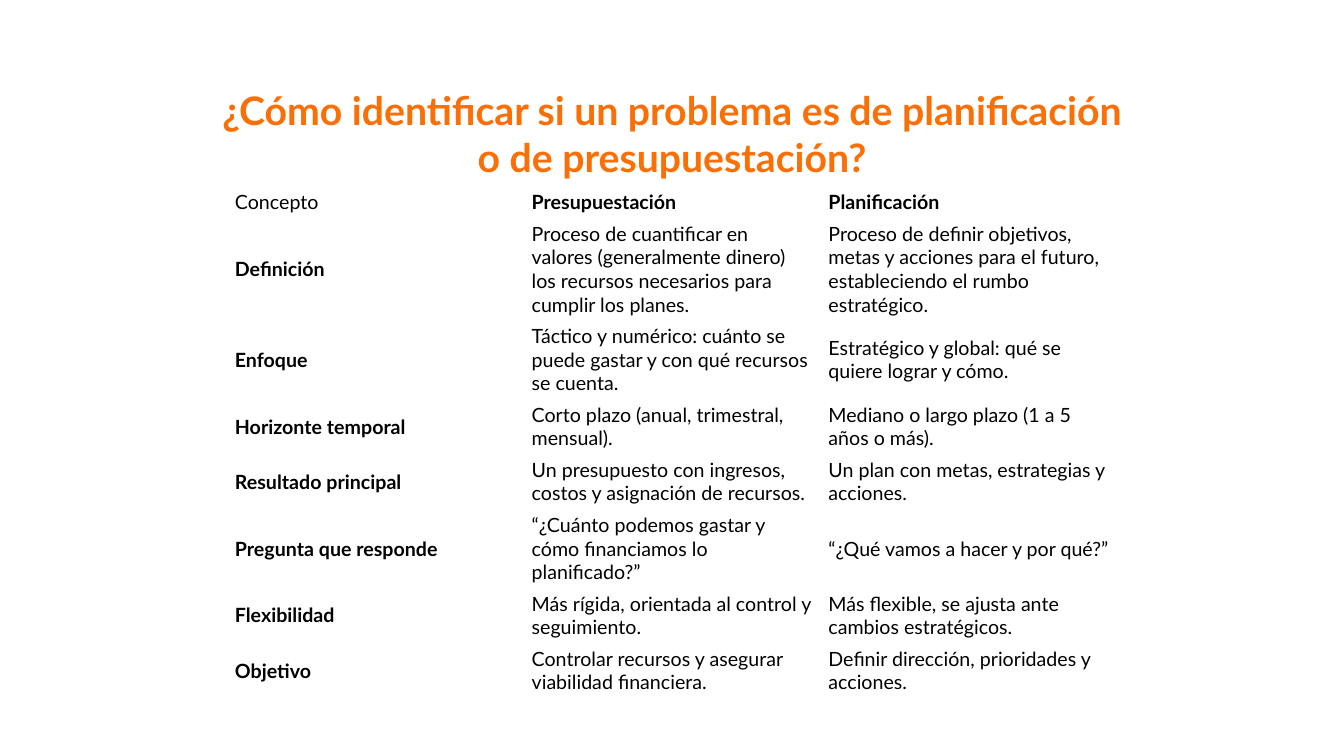
from pptx import Presentation
from pptx.dml.color import RGBColor
from pptx.enum.text import MSO_ANCHOR, PP_ALIGN
from pptx.util import Inches, Pt

MIDDLE = MSO_ANCHOR.MIDDLE
LEFT, CENTER = PP_ALIGN.LEFT, PP_ALIGN.CENTER
FONT = "Lato"
COLORS = {"title": "FA6F06", "text": "000000"}

TITLE = "¿Cómo identificar si un problema es de planificación o de presupuestación?"
COMPARISON = [
    ("Concepto", "Presupuestación", "Planificación"),
    ("Definición",
     "Proceso de cuantificar en valores (generalmente dinero) los recursos necesarios para cumplir los planes.",
     "Proceso de definir objetivos, metas y acciones para el futuro, estableciendo el rumbo estratégico."),
    ("Enfoque",
     "Táctico y numérico: cuánto se puede gastar y con qué recursos se cuenta.",
     "Estratégico y global: qué se quiere lograr y cómo."),
    ("Horizonte temporal",
     "Corto plazo (anual, trimestral, mensual).",
     "Mediano o largo plazo (1 a 5 años o más)."),
    ("Resultado principal",
     "Un presupuesto con ingresos, costos y asignación de recursos.",
     "Un plan con metas, estrategias y acciones."),
    ("Pregunta que responde",
     "“¿Cuánto podemos gastar y cómo financiamos lo planificado?”",
     "“¿Qué vamos a hacer y por qué?”"),
    ("Flexibilidad",
     "Más rígida, orientada al control y seguimiento.",
     "Más flexible, se ajusta ante cambios estratégicos."),
    ("Objetivo",
     "Controlar recursos y asegurar viabilidad financiera.",
     "Definir dirección, prioridades y acciones."),
]
ROW_HEIGHTS = [0.31, 1, 0.77] + [0.54] * 5


def write_text(frame, text, size=14, color="text", bold=False, align=LEFT):
    frame.word_wrap = True
    paragraph = frame.paragraphs[0]
    paragraph.alignment = align
    run = paragraph.add_run()
    run.text = text
    run.font.name = FONT
    run.font.size = Pt(size)
    run.font.bold = bold
    run.font.color.rgb = RGBColor.from_string(COLORS[color])


def add_title(slide, left, top, width, height):
    box = slide.shapes.add_textbox(Inches(left), Inches(top), Inches(width), Inches(height))
    write_text(box.text_frame, TITLE, size=28, color="title", bold=True, align=CENTER)


def add_comparison(slide, left, top, width):
    row_count, column_count = len(COMPARISON), len(COMPARISON[0])
    table = slide.shapes.add_table(row_count, column_count, Inches(left), Inches(top),
                                   Inches(width), Inches(sum(ROW_HEIGHTS))).table
    table.first_row = False
    table.horz_banding = False
    for row, height in zip(table.rows, ROW_HEIGHTS):
        row.height = Inches(height)

    for row_index, texts in enumerate(COMPARISON):
        for column_index, text in enumerate(texts):
            cell = table.cell(row_index, column_index)
            cell.fill.background()
            cell.vertical_anchor = MIDDLE
            cell.margin_left = cell.margin_right = Inches(0.08)
            cell.margin_top = cell.margin_bottom = Inches(0.04)
            # Headings are bold, except the top-left corner
            is_heading = (row_index == 0) != (column_index == 0)
            write_text(cell.text_frame, text, bold=is_heading)


def main():
    presentation = Presentation()
    presentation.slide_width = Inches(13.33)
    presentation.slide_height = Inches(7.5)
    slide = presentation.slides.add_slide(presentation.slide_layouts[6])
    add_comparison(slide, 2.25, 1.85, 8.83)
    add_title(slide, 2.03, 0.81, 9.27, 1.04)
    presentation.save("out.pptx")


if __name__ == "__main__":
    main()
